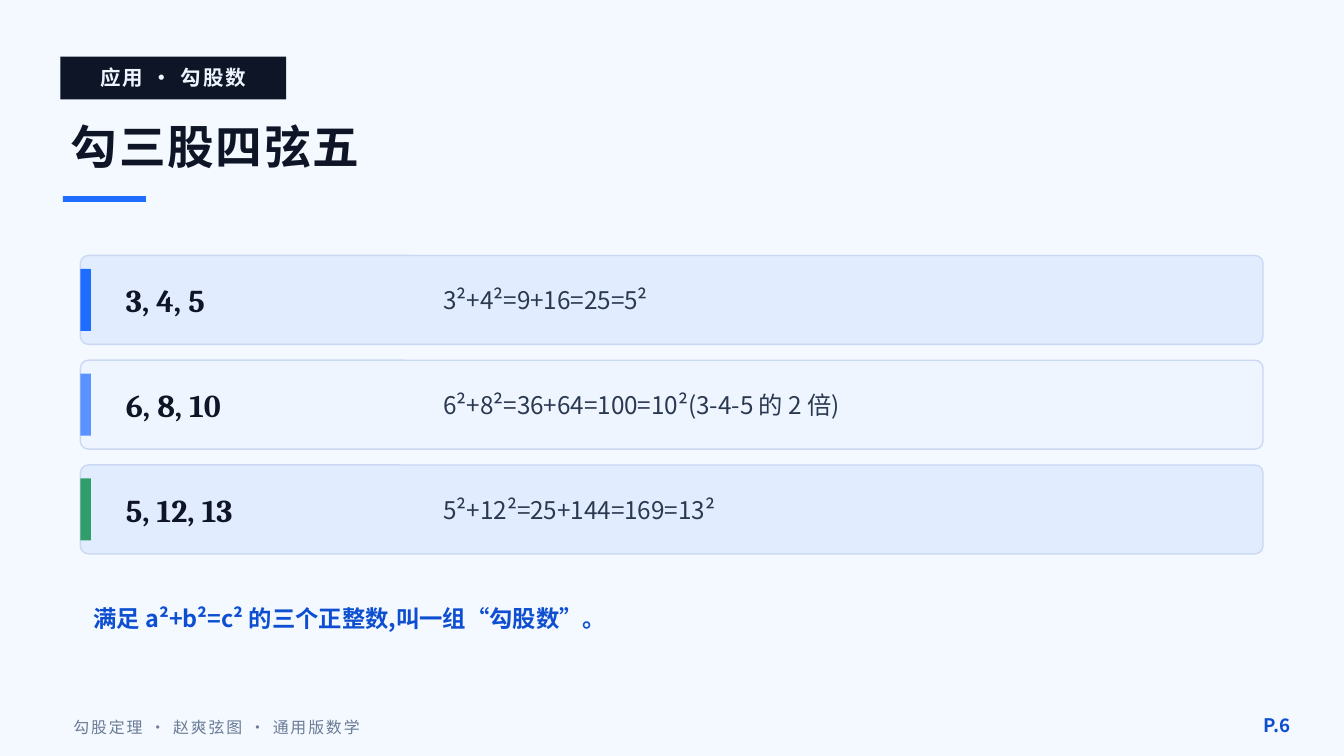
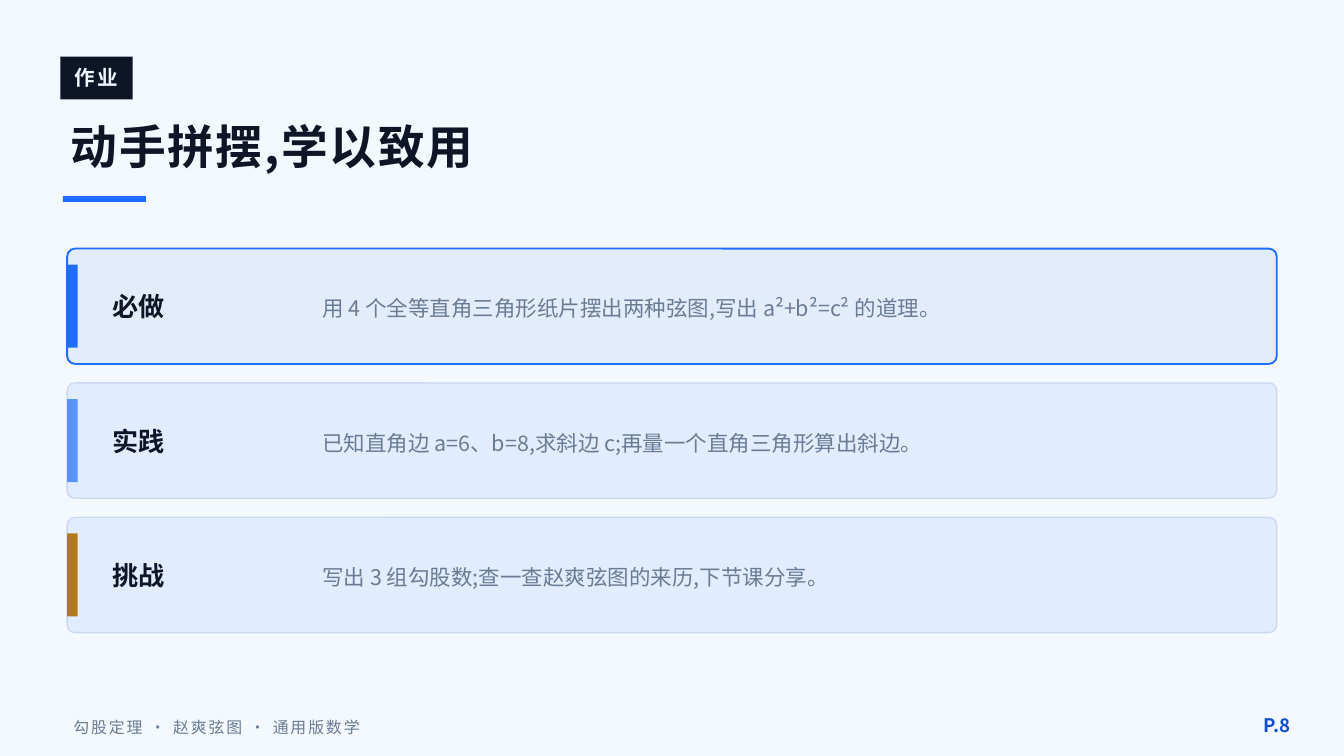
import pptx
import pptx.dml.color
import pptx.enum.shapes
import pptx.enum.text
import pptx.oxml
import pptx.oxml.ns
import pptx.util
from dataclasses import dataclass
from typing import Any, NamedTuple

Cm = pptx.util.Cm
KIND = pptx.enum.shapes.MSO_SHAPE
ALIGN = pptx.enum.text.PP_ALIGN
ANCHOR = pptx.enum.text.MSO_ANCHOR


# Theme: colours, fonts and type styles
class Style(NamedTuple):
    size: float
    color: str
    bold: bool = False
    font: str = "Noto Sans CJK SC"
    track: int = 0  # hundredths of a point
    align: Any = ALIGN.LEFT
    lead: float | None = None  # line spacing in points


@dataclass(frozen=True)
class Theme:
    back: str = "F4F8FF"
    ink: str = "0D1526"
    blue: str = "1F6DFF"
    sky: str = "5A93FF"
    green: str = "2F9E6A"
    gold: str = "B07A1A"
    card: str = "E1ECFE"
    pale: str = "EEF5FF"
    focus: str = "E2ECFB"
    edge: str = "CBD8F2"
    tag: Style = Style(11, "EEF5FF", True, track=100, align=ALIGN.CENTER)
    title: Style = Style(25, "0D1526", True, track=100)
    triple: Style = Style(17, "0D1526", True, "Cambria")
    proof: Style = Style(13, "2A3950")
    level: Style = Style(14, "0D1526", True)
    task: Style = Style(11.5, "6A7C95", lead=16)
    note: Style = Style(12.5, "0D4FD0", True)
    foot: Style = Style(8.5, "6A7C95", track=100)
    page: Style = Style(10, "0D4FD0", True, align=ALIGN.RIGHT)


THEME = Theme()
RADIUS = 0.15
BAR = 0.2


class Box(NamedTuple):
    """Left, top, width and height in centimetres."""
    x: float
    y: float
    w: float
    h: float


class Row(NamedTuple):
    name: str
    body: str
    accent: str
    fill: str = THEME.card
    edge: str = THEME.edge
    line: float = 0.75


class Grid(NamedTuple):
    """Sizes of a stack of cards; x and y place the first one."""
    x: float
    y: float
    w: float
    h: float
    step: float
    bar_h: float
    name_w: float
    name_h: float
    body_x: float
    body_w: float
    body_h: float
    name: Style
    body: Style


# Drawing helpers
def rgb(code: str) -> Any:
    return pptx.dml.color.RGBColor.from_string(code)


def draw(slide: Any, box: Box, fill: str, edge: str = "",
         line: float = 0, radius: float = 0) -> None:
    kind = KIND.ROUNDED_RECTANGLE if radius else KIND.RECTANGLE
    shape = slide.shapes.add_shape(kind, *map(Cm, box))
    shape.shadow.inherit = False
    shape.fill.solid()
    shape.fill.fore_color.rgb = rgb(fill)
    if radius:
        shape.adjustments[0] = radius / box.h
    if edge:
        shape.line.color.rgb = rgb(edge)
        shape.line.width = pptx.util.Pt(line)
    else:
        shape.line.fill.background()


def write(slide: Any, box: Box, text: str, style: Style) -> None:
    frame = slide.shapes.add_textbox(*map(Cm, box)).text_frame
    frame.word_wrap = True
    frame.vertical_anchor = ANCHOR.MIDDLE
    para = frame.paragraphs[0]
    para.alignment = style.align
    if style.lead:
        para.line_spacing = pptx.util.Pt(style.lead)
    run = para.add_run()
    run.text = text
    form = {"size": pptx.util.Pt(style.size), "bold": style.bold,
            "name": style.font}
    for key, value in form.items():
        setattr(run.font, key, value)
    run.font.color.rgb = rgb(style.color)
    # East Asian font and letter spacing
    props = run._r.get_or_add_rPr()
    east = pptx.oxml.parse_xml(
        f'<a:ea {pptx.oxml.ns.nsdecls("a")} typeface="{style.font}"/>')
    props.find(pptx.oxml.ns.qn("a:latin")).addnext(east)
    if style.track:
        props.set("spc", str(style.track))


def stack(slide: Any, grid: Grid, rows: list[Row]) -> None:
    for i, row in enumerate(rows):
        top = grid.y + i * grid.step

        def mid(x: float, w: float, h: float) -> Box:
            return Box(x, top + (grid.h - h) / 2, w, h)

        draw(slide, Box(grid.x, top, grid.w, grid.h), row.fill,
             row.edge, row.line, RADIUS)
        draw(slide, mid(grid.x, BAR, grid.bar_h), row.accent)
        write(slide, mid(grid.x + 0.61, grid.name_w, grid.name_h),
              row.name, grid.name)
        write(slide, mid(grid.body_x, grid.body_w, grid.body_h),
              row.body, grid.body)


# Shared frame: background, tag, title, rule, footer
def start(deck: Any, tag: str, tag_w: float, title: str, page: int) -> Any:
    slide = deck.slides.add_slide(deck.slide_layouts[6])
    slide.background.fill.solid()
    slide.background.fill.fore_color.rgb = rgb(THEME.back)
    draw(slide, Box(1.14, 1.07, tag_w, 0.81), THEME.ink)
    write(slide, Box(1.14, 1.04, tag_w, 0.86), tag, THEME.tag)
    write(slide, Box(1.09, 1.98, 22.86, 1.57), title, THEME.title)
    draw(slide, Box(1.19, 3.71, 1.57, 0.11), THEME.blue)
    write(slide, Box(1.14, 13.36, 15.24, 0.76),
          "勾股定理 · 赵爽弦图 · 通用版数学", THEME.foot)
    write(slide, Box(23.11, 13.31, 1.52, 0.81), f"P.{page}", THEME.page)
    return slide


# Slide: Pythagorean triples
TRIPLES = Grid(x=1.52, y=4.83, w=22.35, h=1.68, step=1.98, bar_h=1.17,
               name_w=6.1, name_h=1.68, body_x=8.13, body_w=15.24,
               body_h=1.68, name=THEME.triple, body=THEME.proof)


def triples(deck: Any) -> None:
    slide = start(deck, "应用 · 勾股数", 4.27, "勾三股四弦五", 6)
    stack(slide, TRIPLES, [
        Row("3, 4, 5", "3²+4²=9+16=25=5²", THEME.blue),
        Row("6, 8, 10", "6²+8²=36+64=100=10²(3-4-5 的 2 倍)",
            THEME.sky, THEME.pale),
        Row("5, 12, 13", "5²+12²=25+144=169=13²", THEME.green),
    ])
    write(slide, Box(1.52, 11.18, 22.35, 1.02),
          "满足 a²+b²=c² 的三个正整数,叫一组“勾股数”。", THEME.note)


# Slide: homework
TASKS = Grid(x=1.27, y=4.7, w=22.86, h=2.18, step=2.54, bar_h=1.57,
             name_w=3.56, name_h=1.68, body_x=5.84, body_w=17.78,
             body_h=1.78, name=THEME.level, body=THEME.task)


def homework(deck: Any) -> None:
    slide = start(deck, "作业", 1.37, "动手拼摆,学以致用", 8)
    stack(slide, TASKS, [
        Row("必做", "用 4 个全等直角三角形纸片摆出两种弦图,写出 a²+b²=c² 的道理。",
            THEME.blue, THEME.focus, THEME.blue, 1),
        Row("实践", "已知直角边 a=6、b=8,求斜边 c;再量一个直角三角形算出斜边。",
            THEME.sky),
        Row("挑战", "写出 3 组勾股数;查一查赵爽弦图的来历,下节课分享。",
            THEME.gold),
    ])


def main() -> None:
    deck = pptx.Presentation()
    deck.slide_width, deck.slide_height = Cm(25.4), Cm(14.29)
    triples(deck)
    homework(deck)
    deck.save("out.pptx")


if __name__ == "__main__":
    main()
